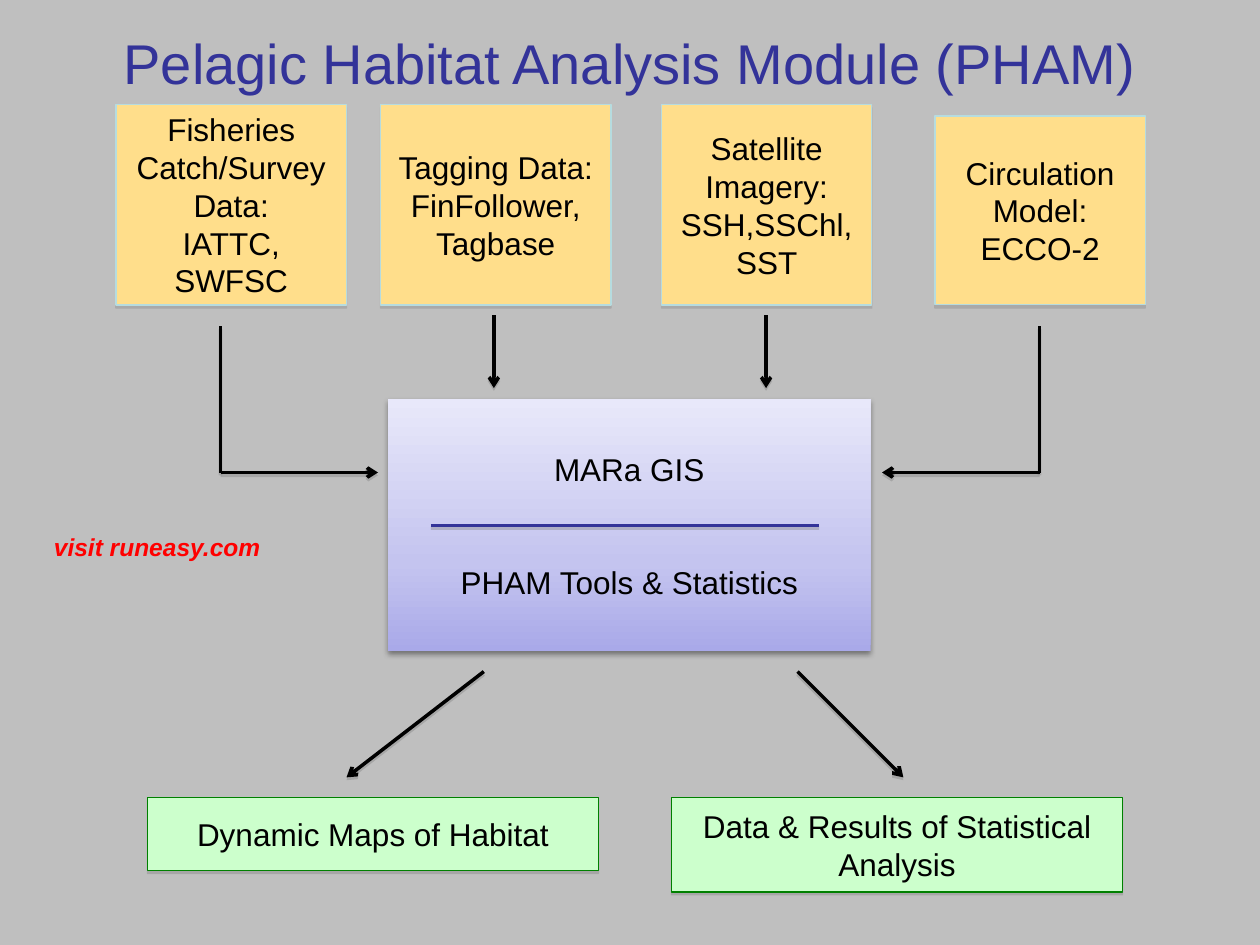
from copy import deepcopy

from lxml import etree
from pptx import Presentation
from pptx.dml.color import RGBColor
from pptx.enum import shapes, text
from pptx.oxml.ns import qn
from pptx.util import Inches, Pt

FONT = "Arial"
BLACK, NAVY, GREY = "000000", "333399", "808080"


def rgb(value):
    return RGBColor.from_string(value)


def add_shadow(sp, color=GREY, alpha=38, blur=0, dist=1.6):
    """Drop a shadow straight down; call after fill and line are set."""
    effects = etree.SubElement(sp._element.spPr, qn("a:effectLst"))
    shadow = etree.SubElement(effects, qn("a:outerShdw"), blurRad=str(Pt(blur)),
                              dist=str(Pt(dist)), dir="5400000", rotWithShape="0")
    clr = etree.SubElement(shadow, qn("a:srgbClr"), val=color)
    etree.SubElement(clr, qn("a:alpha"), val=str(alpha * 1000))


def write(sp, lines, size=18, color=BLACK, gap=0):
    """Centre the lines in a shape, with a gap between paragraphs."""
    tf = sp.text_frame
    tf.word_wrap = True
    tf.vertical_anchor = text.MSO_ANCHOR.MIDDLE
    for i, line in enumerate(lines):
        p = tf.paragraphs[0] if i == 0 else tf.add_paragraph()
        p.text = line
        p.alignment = text.PP_ALIGN.CENTER
        p.font.name, p.font.size = FONT, Pt(size)
        p.font.color.rgb = rgb(color)
        if i and gap:
            p.space_before = Pt(gap)


def add_rect(s, box):
    return s.shapes.add_shape(shapes.MSO_SHAPE.RECTANGLE, *map(Inches, box))


def add_box(s, box, lines, fill, border, alpha=38, dist=1.6):
    sp = add_rect(s, box)
    sp.fill.solid()
    sp.fill.fore_color.rgb = rgb(fill)
    sp.line.color.rgb = rgb(border)
    sp.line.width = Pt(0.75)
    add_shadow(sp, alpha=alpha, dist=dist)
    write(sp, lines)


def add_line(s, start, end, color=BLACK, arrow=True):
    c = s.shapes.add_connector(shapes.MSO_CONNECTOR.STRAIGHT,
                               *map(Inches, (*start, *end)))
    c.line.color.rgb = rgb(color)
    c.line.width = Pt(2)
    if arrow:
        etree.SubElement(c.line._get_or_add_ln(), qn("a:tailEnd"), type="arrow")
    add_shadow(c)


def add_title(s, box):
    write(s.shapes.add_textbox(*map(Inches, box)),
          ["Pelagic Habitat Analysis Module (PHAM)"], 32, NAVY)


def add_inputs(s, bottom):
    """Data sources: left, top, width and text; all but one share a bottom."""
    sources = [
        (0.92, 0.83, 1.83, ["Fisheries Catch/Survey Data:", "IATTC, SWFSC"]),
        (3.02, 0.83, 1.83, ["Tagging Data: FinFollower, Tagbase"]),
        (5.25, 0.83, 1.67, ["Satellite Imagery:", "SSH,SSChl,SST"]),
        (7.42, 0.92, 1.67, ["Circulation Model:", "ECCO-2"]),
    ]
    for left, top, width, lines in sources:
        add_box(s, (left, top, width, bottom - top), lines,
                "FFDE8B", "B6DCDF", alpha=35, dist=1.8)


def add_core(s, box):
    """Central system box with a gradient and a divider."""
    left, top, width, height = box
    sp = add_rect(s, box)
    sp.fill.gradient()
    sp.fill.gradient_angle = 90
    stop_list = sp._element.spPr.find(".//" + qn("a:gsLst"))
    stop_list.insert(1, deepcopy(stop_list[0]))
    stops = [(0, "A9A9E9"), (0.35, "C4C4EF"), (1, "E8E8FA")]
    for stop, (position, color) in zip(sp.fill.gradient_stops, stops):
        stop.position = position
        stop.color.rgb = rgb(color)
    sp.line.fill.background()
    add_shadow(sp, BLACK, blur=3.1)
    write(sp, ["MARa GIS", "PHAM Tools & Statistics"], gap=43)
    middle = top + height / 2
    add_line(s, (left + 0.34, middle), (left + width - 0.41, middle), NAVY, arrow=False)


def add_arrows(s):
    # Straight down from the two middle sources
    for x in (3.92, 6.08):
        add_line(s, (x, 2.5), (x, 3.08))
    # Elbows from the outer sources
    for x, tip in ((1.75, 3), (8.25, 7)):
        add_line(s, (x, 2.59), (x, 3.75), arrow=False)
        add_line(s, (x, 3.75), (tip, 3.75))
    # Diagonals to the results
    for x, tip in ((3.84, 2.75), (6.33, 7.17)):
        add_line(s, (x, 5.33), (tip, 6.17))


def add_outputs(s, top):
    results = [(1.17, 0.58, "Dynamic Maps of Habitat"),
               (5.33, 0.75, "Data & Results of Statistical Analysis")]
    for left, height, label in results:
        add_box(s, (left, top, 3.58, height), [label], "CCFFCC", "008000")


def add_web_note(s, box):
    tf = s.shapes.add_textbox(*map(Inches, box)).text_frame
    tf.word_wrap = False
    p = tf.paragraphs[0]
    p.text = "visit runeasy.com"
    p.font.name, p.font.size = FONT, Pt(14)
    p.font.bold = p.font.italic = True
    p.font.color.rgb = rgb("FF0000")


def main():
    prs = Presentation()
    prs.slide_width, prs.slide_height = Inches(10), Inches(7.5)
    s = prs.slides.add_slide(prs.slide_layouts[6])
    s.background.fill.solid()
    s.background.fill.fore_color.rgb = rgb("BFBFBF")
    add_title(s, (0.5, 0.08, 9, 0.83))
    add_inputs(s, bottom=2.42)
    add_core(s, (3.08, 3.17, 3.83, 2))
    add_arrows(s)
    add_outputs(s, top=6.33)
    add_web_note(s, (0.33, 4.17, 1.84, 0.34))
    prs.save("out.pptx")


if __name__ == "__main__":
    main()
